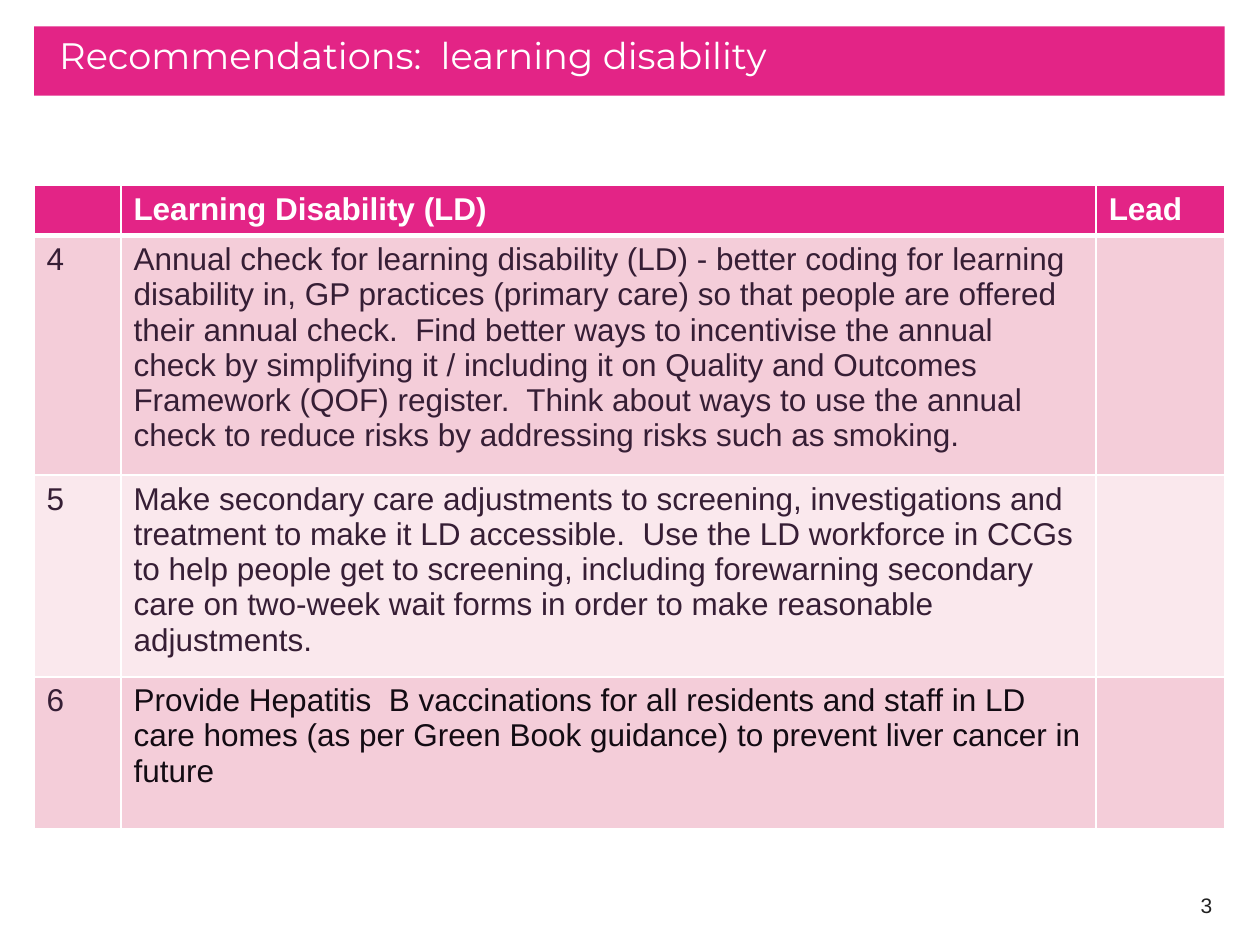
from dataclasses import dataclass

from lxml import etree
from pptx import Presentation
from pptx import util as u
from pptx.dml.color import RGBColor
from pptx.enum import shapes, text
from pptx.oxml import ns


@dataclass(frozen=True)
class Theme:
    pink: str = "E32486"
    rose: str = "F4CDD9"
    blush: str = "FAE8ED"
    white: str = "FFFFFF"
    plum: str = "361E35"
    dark: str = "130B13"
    grey: str = "202020"
    head: str = "Montserrat"
    body: str = "Arial"
    title: int = 21
    cell: int = 18
    page: int = 12


class Deck:
    def __init__(self, theme):
        self.theme = theme
        self.file = Presentation()
        self.file.slide_width = u.Inches(10)
        self.file.slide_height = u.Inches(7.5)
        self.slide = self.file.slides.add_slide(self.file.slide_layouts[6])

    def label(self, frame, words, size, color, font=None, bold=False, align=text.PP_ALIGN.LEFT):
        para = frame.paragraphs[0]
        para.alignment = align
        run = para.add_run()
        run.text = words
        run.font.name = font or self.theme.body
        run.font.size = u.Pt(size)
        run.font.bold = bold
        run.font.color.rgb = RGBColor.from_string(color)

    def fill(self, item, color):
        item.fill.solid()
        item.fill.fore_color.rgb = RGBColor.from_string(color)

    def title(self, words, box):
        bar = self.slide.shapes.add_shape(shapes.MSO_SHAPE.RECTANGLE, *map(u.Inches, box))
        bar.shadow.inherit = False
        self.fill(bar, self.theme.pink)
        bar.line.fill.background()
        frame = bar.text_frame
        frame.margin_left = u.Inches(0.2)
        frame.vertical_anchor = text.MSO_ANCHOR.TOP
        self.label(frame, words, self.theme.title, self.theme.white, self.theme.head)

    def page(self, words, box):
        frame = self.slide.shapes.add_textbox(*map(u.Inches, box)).text_frame
        frame.word_wrap = True
        frame.vertical_anchor = text.MSO_ANCHOR.MIDDLE
        self.label(frame, words, self.theme.page, self.theme.grey, align=text.PP_ALIGN.RIGHT)

    def edge(self, cell, widths):
        """Draw white cell borders; widths maps a side (L, R, T, B) to points."""
        props = cell._tc.get_or_add_tcPr()
        for spot, side in enumerate("LRTB"):
            line = etree.Element(ns.qn(f"a:ln{side}"), w=str(u.Pt(widths[side])))
            paint = etree.SubElement(line, ns.qn("a:solidFill"))
            etree.SubElement(paint, ns.qn("a:srgbClr"), val=self.theme.white)
            props.insert(spot, line)

    def table(self, rows, spot, wide, tall):
        look = self.theme
        size = sum(wide), sum(tall)
        grid = self.slide.shapes.add_table(len(rows), len(wide), *map(u.Inches, spot + size)).table
        for col, width in zip(grid.columns, wide):
            col.width = u.Inches(width)
        for r, (words, ink) in enumerate(rows):
            grid.rows[r].height = u.Inches(tall[r])
            shade = look.pink if r == 0 else look.rose if r % 2 else look.blush
            for c, word in enumerate(words):
                cell = grid.cell(r, c)
                self.fill(cell, shade)
                self.edge(cell, {"L": 1, "R": 1, "T": 3 if r == 1 else 1, "B": 1 if r else 3})
                if word:
                    color = ink if c or r == 0 else look.plum
                    self.label(cell.text_frame, word, look.cell, color, bold=r == 0)


def main():
    look = Theme()
    deck = Deck(look)
    left, width = 0.27, 9.45
    deck.title("Recommendations:  learning disability", (left, 0.21, width, 0.55))
    deck.page("3", (7.39, 6.98, 2.33, 0.4))
    rows = [
        (("", "Learning Disability (LD)", "Lead"), look.white),
        (("4", "Annual check for learning disability (LD) - better coding for learning "
          "disability in, GP practices (primary care) so that people are offered their "
          "annual check.  Find better ways to incentivise the annual check by simplifying "
          "it / including it on Quality and Outcomes Framework (QOF) register.  Think about "
          "ways to use the annual check to reduce risks by addressing risks such as "
          "smoking.", ""), look.plum),
        (("5", "Make secondary care adjustments to screening, investigations and treatment "
          "to make it LD accessible.  Use the LD workforce in CCGs to help people get to "
          "screening, including forewarning secondary care on two-week wait forms in order "
          "to make reasonable adjustments.", ""), look.plum),
        (("6", "Provide Hepatitis  B vaccinations for all residents and staff in LD care "
          "homes (as per Green Book guidance) to prevent liver cancer in future", ""),
         look.dark),
    ]
    deck.table(rows, (left, 1.47), (0.69, 7.74, 1.02), (0.38, 1.78, 1.5, 1.21))
    deck.file.save("out.pptx")


if __name__ == "__main__":
    main()
